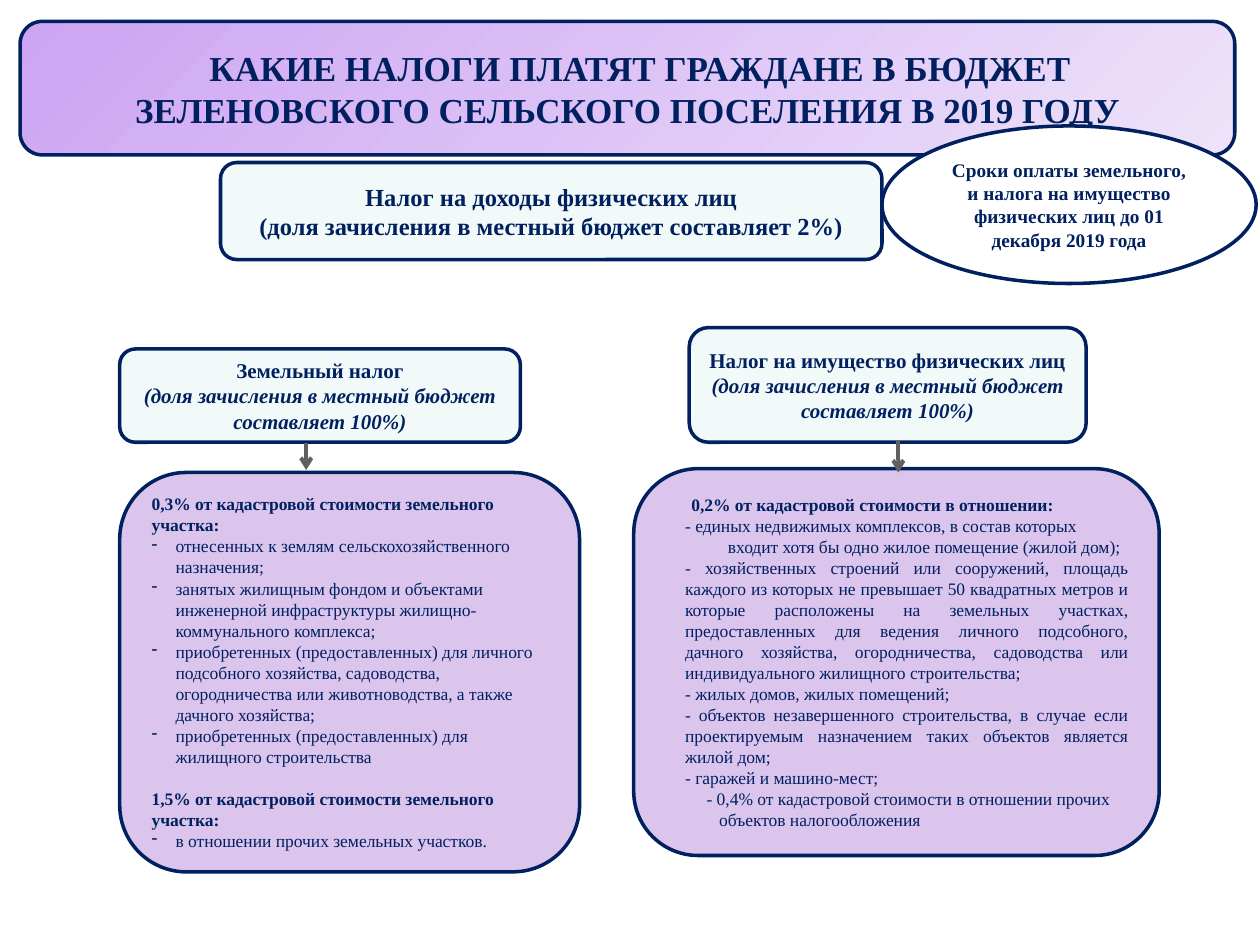
from dataclasses import dataclass

from lxml import etree
from pptx import Presentation
from pptx.dml.color import RGBColor
from pptx.enum.shapes import MSO_CONNECTOR, MSO_SHAPE
from pptx.enum.text import MSO_ANCHOR, PP_ALIGN
from pptx.oxml.ns import qn
from pptx.util import Inches, Pt

ROUNDED, OVAL = MSO_SHAPE.ROUNDED_RECTANGLE, MSO_SHAPE.OVAL
STRAIGHT = MSO_CONNECTOR.STRAIGHT
MIDDLE = MSO_ANCHOR.MIDDLE
LEFT, CENTER, JUSTIFY = PP_ALIGN.LEFT, PP_ALIGN.CENTER, PP_ALIGN.JUSTIFY


@dataclass(frozen=True)
class Theme:
    font: str = "Times New Roman"
    navy: str = "002060"
    mint: str = "F1F9F9"
    lilac: str = "DCC5ED"
    white: str = "FFFFFF"
    arrow: str = "606060"
    title_fill: tuple = ("CDA4F2", "EEE3FA")
    title_size: int = 20
    income_size: int = 14
    tax_size: int = 12
    deadline_size: int = 11
    body_size: int = 10
    outline: float = 2
    arrow_width: float = 2.25


@dataclass(frozen=True)
class Para:
    text: str
    bold: bool = False
    italic: bool = False
    align: PP_ALIGN = LEFT
    margin: float = 0
    indent: float = 0
    bullet: str = ""
    before: float = 0


def heading(text, **options):
    return Para(text, bold=True, align=CENTER, **options)


def dash_item(text):
    return Para(text, margin=0.19, indent=-0.19, bullet="-")


def justified(text):
    return Para(text, align=JUSTIFY, margin=0.16)


class SlideBuilder:
    def __init__(self, slide, theme):
        self.s = slide
        self.theme = theme

    def box(self, kind, at, fill, size, paras):
        """Add an outlined shape with text; a pair of fills makes a diagonal gradient."""
        sp = self.s.shapes.add_shape(kind, *map(Inches, at))
        sp.shadow.inherit = False
        if isinstance(fill, tuple):
            sp.fill.gradient()
            sp.fill.gradient_angle = 315
            for stop, color in zip(sp.fill.gradient_stops, fill):
                stop.color.rgb = RGBColor.from_string(color)
        else:
            sp.fill.solid()
            sp.fill.fore_color.rgb = RGBColor.from_string(fill)
        sp.line.color.rgb = RGBColor.from_string(self.theme.navy)
        sp.line.width = Pt(self.theme.outline)
        tf = sp.text_frame
        tf.word_wrap = True
        tf.vertical_anchor = MIDDLE
        for i, para in enumerate(paras):
            self.paragraph(tf.add_paragraph() if i else tf.paragraphs[0], para, size)

    def paragraph(self, p, para, size):
        p.text = para.text
        p.alignment = para.align
        p.space_before = Pt(para.before)
        p.font.name = self.theme.font
        p.font.size = Pt(size)
        p.font.bold = para.bold
        p.font.italic = para.italic
        p.font.color.rgb = RGBColor.from_string(self.theme.navy)
        pPr = p._p.get_or_add_pPr()
        pPr.set("marL", str(Inches(para.margin)))
        pPr.set("indent", str(Inches(para.indent)))
        if para.bullet:
            bullet = etree.Element(qn("a:buChar"), char=para.bullet)
            pPr.find(qn("a:defRPr")).addprevious(bullet)

    def down_arrow(self, x, top, bottom):
        c = self.s.shapes.add_connector(STRAIGHT, *map(Inches, (x, top, x, bottom)))
        c.line.color.rgb = RGBColor.from_string(self.theme.arrow)
        c.line.width = Pt(self.theme.arrow_width)
        etree.SubElement(c.line._get_or_add_ln(), qn("a:tailEnd"), type="arrow")
        etree.SubElement(c._element.spPr, qn("a:effectLst"))


def main():
    prs = Presentation()
    prs.slide_width, prs.slide_height = Inches(10), Inches(7.5)
    theme = Theme()
    b = SlideBuilder(prs.slides.add_slide(prs.slide_layouts[6]), theme)

    b.box(ROUNDED, (0.16, 0.17, 9.64, 1.06), theme.title_fill, theme.title_size, [
        heading("КАКИЕ НАЛОГИ ПЛАТЯТ ГРАЖДАНЕ В БЮДЖЕТ", margin=0.2),
        heading("ЗЕЛЕНОВСКОГО СЕЛЬСКОГО ПОСЕЛЕНИЯ В 2019 ГОДУ"),
    ])

    share = heading("(доля зачисления в местный бюджет составляет 100%)", italic=True)
    for name, at in (
        ("Налог на имущество физических лиц", (5.47, 2.6, 3.15, 0.91)),
        ("Земельный налог", (0.95, 2.77, 3.18, 0.74)),
    ):
        b.box(ROUNDED, at, theme.mint, theme.tax_size, [heading(name), share])

    b.box(ROUNDED, (5.03, 3.72, 4.17, 3.07), theme.lilac, theme.body_size, [
        Para("0,2% от кадастровой стоимости в отношении:", bold=True, margin=0.21),
        Para("- единых недвижимых комплексов, в состав которых\v"
             "входит хотя бы одно жилое помещение (жилой дом);",
             margin=0.5, indent=-0.34),
        justified("- хозяйственных строений или сооружений, площадь каждого из которых "
                  "не превышает 50 квадратных метров и которые расположены на земельных "
                  "участках, предоставленных для ведения личного подсобного, дачного "
                  "хозяйства, огородничества, садоводства или индивидуального "
                  "жилищного строительства;"),
        justified("- жилых домов, жилых помещений;"),
        justified("- объектов незавершенного строительства, в случае если проектируемым "
                  "назначением таких объектов является жилой дом;"),
        justified("- гаражей и машино-мест;"),
        Para("- 0,4% от кадастровой стоимости в отношении прочих", margin=0.33),
        Para("объектов налогообложения", margin=0.43),
    ])
    b.down_arrow(7.13, 3.5, 3.75)

    b.box(ROUNDED, (0.95, 3.75, 3.65, 3.17), theme.lilac, theme.body_size, [
        Para("0,3% от кадастровой стоимости земельного участка:", bold=True),
        dash_item("отнесенных к землям сельскохозяйственного назначения;"),
        dash_item("занятых жилищным фондом и объектами инженерной инфраструктуры "
                  "жилищно-коммунального комплекса;"),
        dash_item("приобретенных (предоставленных) для личного подсобного хозяйства, "
                  "садоводства, огородничества или животноводства, а также "
                  "дачного хозяйства;"),
        dash_item("приобретенных (предоставленных) для жилищного строительства"),
        Para("1,5% от кадастровой стоимости земельного участка:", bold=True, before=12),
        dash_item("в отношении прочих земельных участков."),
    ])
    b.down_arrow(2.43, 3.52, 3.73)

    b.box(ROUNDED, (1.75, 1.29, 5.25, 0.77), theme.mint, theme.income_size, [
        heading("Налог на доходы физических лиц"),
        heading("(доля зачисления в местный бюджет составляет 2%)"),
    ])
    b.box(OVAL, (7, 1, 2.97, 1.25), theme.white, theme.deadline_size, [
        heading("Сроки оплаты земельного, и налога на имущество физических лиц "
                "до 01 декабря 2019 года"),
    ])
    prs.save("out.pptx")


if __name__ == "__main__":
    main()
